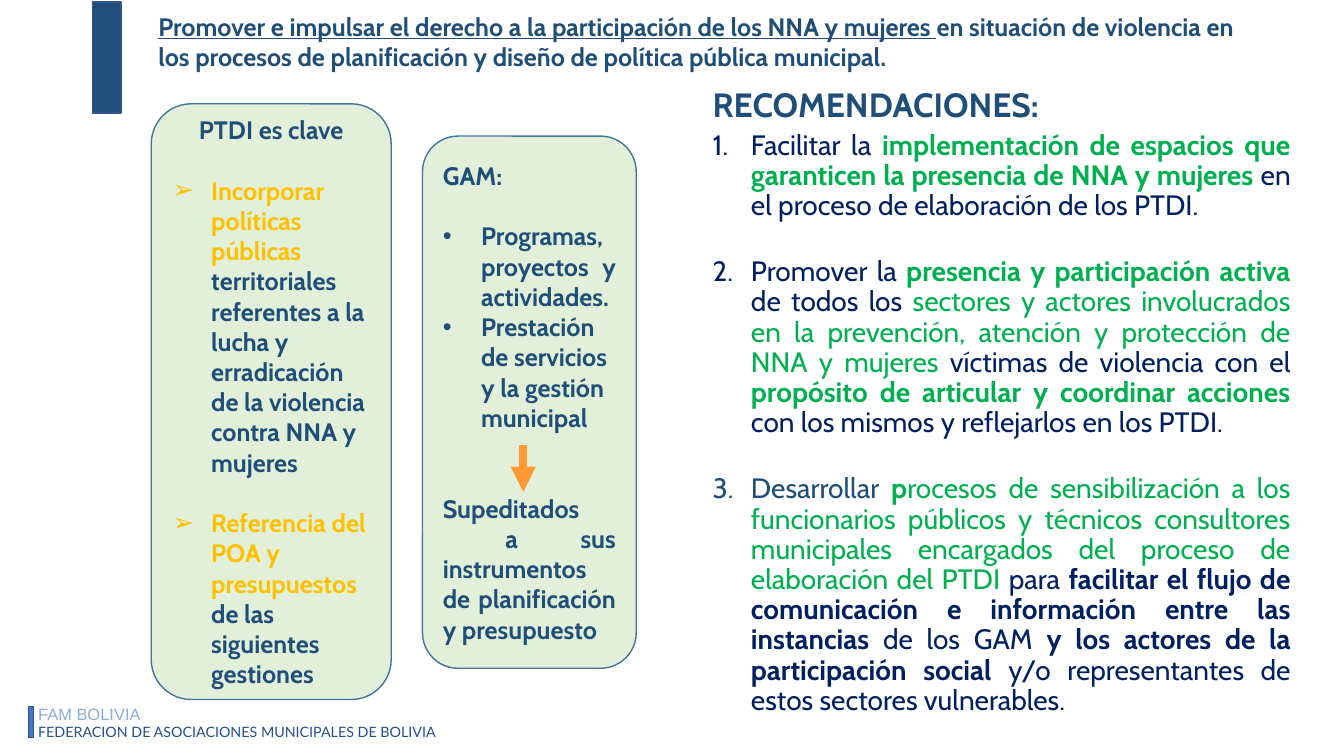
from lxml import etree
from pptx import Presentation
from pptx.dml.color import RGBColor
from pptx.enum.shapes import MSO_CONNECTOR, MSO_SHAPE
from pptx.enum.text import MSO_ANCHOR, MSO_AUTO_SIZE, PP_ALIGN
from pptx.oxml.ns import qn
from pptx.util import Pt

PIXEL = 9144
TITLE_ONLY = 5
RECTANGLE, ROUNDED = MSO_SHAPE.RECTANGLE, MSO_SHAPE.ROUNDED_RECTANGLE
STRAIGHT = MSO_CONNECTOR.STRAIGHT
TOP, MIDDLE = MSO_ANCHOR.TOP, MSO_ANCHOR.MIDDLE
LEFT, CENTER, JUSTIFY = PP_ALIGN.LEFT, PP_ALIGN.CENTER, PP_ALIGN.JUSTIFY

BLUE, NAVY, GREEN, GOLD, ORANGE = "1F4E79", "002060", "00B050", "FFC000", "FF9933"
PALE_GREEN, PANEL_EDGE = "E2F0D9", "43739E"
ACCENT, ACCENT_EDGE = "4472C4", "325491"
SOFT_BLUE, FOOTER_BLUE = "8FAADC", "274E8A"
HANGING = 38
BLANK_LINE = 21.6


def color(value):
    return RGBColor.from_string(value)


def px(*values):
    return [value * PIXEL for value in values]


class SlideBuilder:
    def __init__(self, slide, font="Cabin"):
        self.slide = slide
        self.font = font

    def frame(self, shape, anchor):
        frame = shape.text_frame
        frame.word_wrap = True
        frame.auto_size = MSO_AUTO_SIZE.NONE
        frame.vertical_anchor = anchor
        return frame

    def title(self, box):
        shape = self.slide.shapes.title
        shape.left, shape.top, shape.width, shape.height = px(*box)
        return self.frame(shape, TOP)

    def textbox(self, box, anchor=TOP):
        return self.frame(self.slide.shapes.add_textbox(*px(*box)), anchor)

    def box(self, kind, box, fill, edge):
        shape = self.slide.shapes.add_shape(kind, *px(*box))
        shape.shadow.inherit = False
        shape.fill.solid()
        shape.fill.fore_color.rgb = color(fill)
        shape.line.color.rgb = color(edge)
        shape.line.width = Pt(1)
        return self.frame(shape, MIDDLE)

    def arrow(self, start, end, line_color, width):
        connector = self.slide.shapes.add_connector(STRAIGHT, *px(*start, *end))
        connector.line.color.rgb = color(line_color)
        connector.line.width = Pt(width)
        etree.SubElement(connector.line._get_or_add_ln(), qn("a:tailEnd"), type="triangle")
        etree.SubElement(connector._element.spPr, qn("a:effectLst"))

    def bullet(self, paragraph, mark):
        properties = paragraph._p.get_or_add_pPr()
        properties.set("marL", str(HANGING * PIXEL))
        properties.set("indent", str(-HANGING * PIXEL))
        if mark == "1.":
            etree.SubElement(properties, qn("a:buAutoNum"), type="arabicPeriod")
        else:
            etree.SubElement(properties, qn("a:buFont"), typeface="Arial")
            etree.SubElement(properties, qn("a:buChar"), char=mark)

    def paragraph(self, frame, spans, size=18, text_color=BLUE, bold=True, font=None,
                  align=LEFT, before=0, spacing=1.0, mark=None):
        first = frame.paragraphs[0]
        paragraph = frame.add_paragraph() if first.runs else first
        paragraph.alignment = align
        paragraph.space_before = Pt(before)
        paragraph.line_spacing = spacing
        if mark:
            self.bullet(paragraph, mark)
        paragraph.font.name = font or self.font
        paragraph.font.size = Pt(size)
        paragraph.font.bold = bold
        paragraph.font.color.rgb = color(text_color)
        for text, changes in spans:
            run = paragraph.add_run()
            run.text = text
            if "color" in changes:
                run.font.color.rgb = color(changes["color"])
            if "bold" in changes:
                run.font.bold = changes["bold"]
            if "underline" in changes:
                run.font.underline = changes["underline"]
        return paragraph


def plain(text):
    return [(text, {})]


def add_footer(builder):
    footer = builder.textbox((28, 695, 422, 55), MIDDLE)
    builder.paragraph(footer, plain("FAM BOLIVIA"), 11.7, SOFT_BLUE, False, "Arial", spacing=0.9)
    name = builder.paragraph(footer, plain("FEDERACION DE ASOCIACIONES MUNICIPALES DE BOLIVIA"),
                             17.6, FOOTER_BLUE, False, "Lato", spacing=0.9)
    name.runs[0]._r.get_or_add_rPr().set("baseline", "30000")
    builder.box(RECTANGLE, (28, 701, 5, 31), ACCENT, ACCENT_EDGE)


def add_heading(builder):
    builder.box(RECTANGLE, (92, 2, 28, 110), BLUE, ACCENT_EDGE)
    builder.paragraph(builder.title((147, 6, 1122, 71)), [
        ("Promover e impulsar el derecho a la participación de los NNA y mujeres ",
         {"underline": True}),
        ("en situación de violencia en los procesos de planificación y diseño de "
         "política pública municipal.", {}),
    ])


def add_gam_panel(builder):
    panel = builder.box(ROUNDED, (419, 135, 212, 528), PALE_GREEN, PANEL_EDGE)
    builder.paragraph(panel, plain("GAM:"), align=JUSTIFY)
    builder.paragraph(panel, plain("Programas, proyectos y actividades."),
                      align=JUSTIFY, before=BLANK_LINE, mark="•")
    builder.paragraph(panel, plain("Prestación de servicios y la gestión municipal"), mark="•")
    builder.paragraph(panel, plain("Supeditados"), align=JUSTIFY, before=2 * BLANK_LINE)
    builder.paragraph(panel, plain(" a sus instrumentos de planificación y presupuesto"),
                      align=JUSTIFY)
    builder.arrow((519, 441), (519, 488), ORANGE, 6)


def add_ptdi_panel(builder):
    panel = builder.box(ROUNDED, (150, 103, 238, 591), PALE_GREEN, PANEL_EDGE)
    builder.paragraph(panel, plain("PTDI es clave"), align=CENTER)
    for key, rest in (
        ("Incorporar políticas públicas ",
         "territoriales referentes a la lucha y erradicación de la violencia contra NNA y mujeres"),
        ("Referencia del POA y presupuestos ", "de las siguientes gestiones"),
    ):
        builder.paragraph(panel, [(key, {"color": GOLD}), (rest, {})],
                          before=BLANK_LINE, mark="➢")


def add_recommendations(builder):
    heading = builder.textbox((697, 78, 482, 50))
    builder.paragraph(heading, plain("RECOMENDACIONES:"), 24)
    strong_green = {"color": GREEN, "bold": True}
    green, strong = {"color": GREEN}, {"bold": True}
    recommendations = [
        [("Facilitar la ", {}),
         ("implementación de espacios que garanticen la presencia de NNA y mujeres ", strong_green),
         ("en el proceso de elaboración de los PTDI.", {})],
        [("Promover la ", {}),
         ("presencia y participación activa ", strong_green),
         ("de todos los ", {}),
         ("sectores y actores involucrados en la prevención, atención y protección de "
          "NNA y mujeres ", green),
         ("víctimas de violencia con el ", {}),
         ("propósito de articular y coordinar acciones", strong_green),
         (" con los mismos y reflejarlos en los PTDI.", {})],
        [("Desarrollar ", {"color": BLUE}),
         ("p", strong_green),
         ("rocesos de sensibilización a los funcionarios públicos y técnicos consultores "
          "municipales encargados del proceso de elaboración del PTDI ", green),
         ("para ", {}),
         ("facilitar el flujo de comunicación e información entre las instancias ", strong),
         ("de los GAM ", {}),
         ("y los actores de la participación social", strong),
         (" y/o representantes de estos sectores vulnerables.", {})],
    ]
    body = builder.textbox((697, 125, 593, 569))
    for index, spans in enumerate(recommendations):
        builder.paragraph(body, spans, 20, NAVY, False, align=JUSTIFY,
                          before=25.5 if index else 0, spacing=0.9, mark="1.")


def main():
    presentation = Presentation()
    presentation.slide_width, presentation.slide_height = px(1333, 750)
    slide = presentation.slides.add_slide(presentation.slide_layouts[TITLE_ONLY])
    builder = SlideBuilder(slide)
    add_footer(builder)
    add_heading(builder)
    add_gam_panel(builder)
    add_ptdi_panel(builder)
    add_recommendations(builder)
    presentation.save("out.pptx")


if __name__ == "__main__":
    main()
